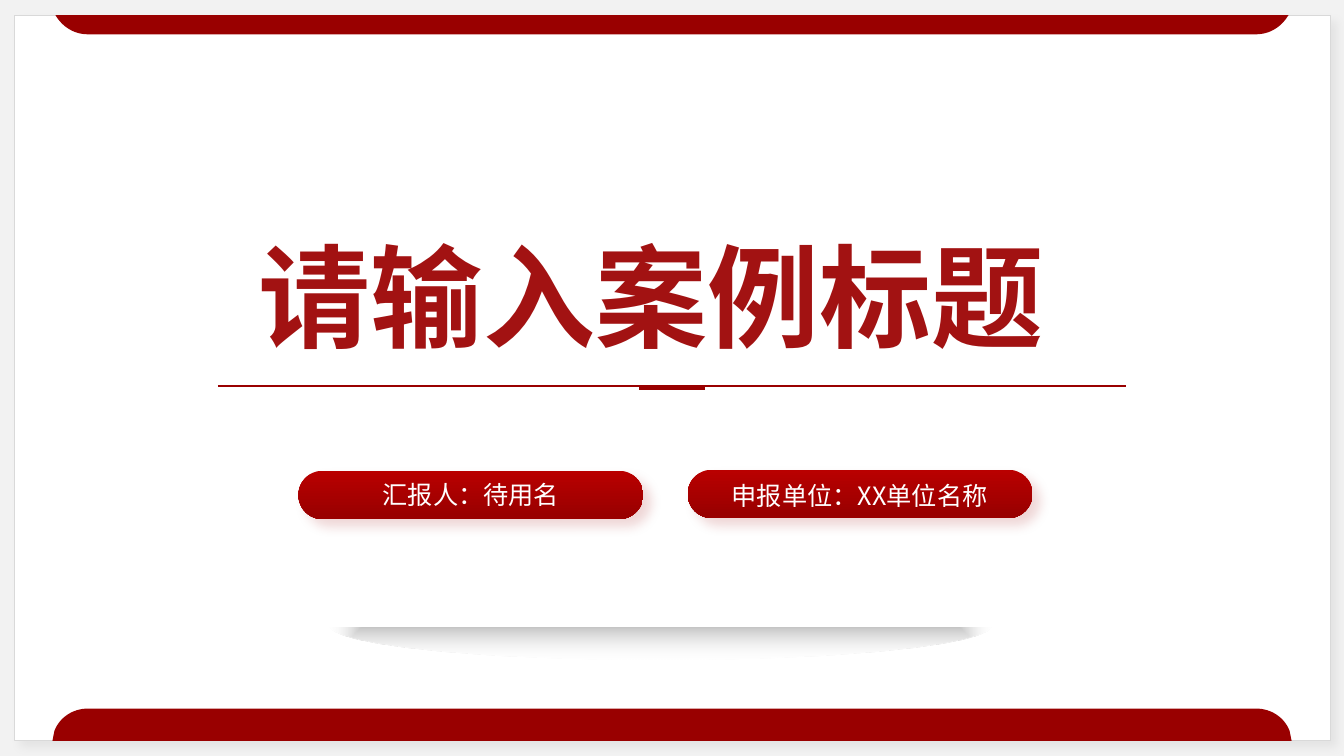
from lxml import etree
from pptx import Presentation
from pptx import util as u
from pptx.dml.color import RGBColor
from pptx.enum import shapes, text
from pptx.oxml import ns

FONT = "Noto Sans CJK SC"
BACKDROP = RGBColor(0xF2, 0xF2, 0xF2)
WHITE = RGBColor(0xFF, 0xFF, 0xFF)
BLACK = RGBColor(0, 0, 0)
BORDER = RGBColor(0xD9, 0xD9, 0xD9)
DARK_RED = RGBColor(0x99, 0, 0)
BRIGHT_RED = RGBColor(0xB9, 0, 0)
TITLE_RED = RGBColor(0xA2, 0x12, 0x12)
SHADE = RGBColor(0xBF, 0xBF, 0xBF)
PALE = RGBColor(0xF9, 0xF9, 0xF9)
SLIDE_WIDTH = 13.33


def add_element(parent, tag, **attributes):
    element = etree.SubElement(parent, ns.qn(tag))
    for name, value in attributes.items():
        element.set(name, str(value))
    return element


def add_shape(page, kind, left, top, width, height, fill=None):
    shape = page.shapes.add_shape(
        kind, u.Inches(left), u.Inches(top), u.Inches(width), u.Inches(height))
    shape.line.fill.background()
    shape.shadow.inherit = False
    if fill is not None:
        shape.fill.solid()
        shape.fill.fore_color.rgb = fill
    return shape


def add_shadow(shape, color, opacity, blur):
    effects = shape._element.spPr.find(ns.qn("a:effectLst"))
    shadow = add_element(effects, "a:outerShdw", blurRad=u.Pt(blur), dist=u.Pt(7),
                         dir=45 * 60000, algn="tl", rotWithShape=0)
    tint = add_element(shadow, "a:srgbClr", val=color)
    add_element(tint, "a:alpha", val=opacity * 1000)


def set_gradient(shape, first, last, end=1.0):
    shape.fill.gradient()
    shape.fill.gradient_angle = 270
    for stop, color, position in zip(shape.fill.gradient_stops, (first, last), (0, end)):
        stop.color.rgb = color
        stop.position = position


def add_text(page, words, left, top, width, height, size, color, centred=True):
    box = page.shapes.add_textbox(
        u.Inches(left), u.Inches(top), u.Inches(width), u.Inches(height))
    frame = box.text_frame
    frame.word_wrap = centred
    frame.auto_size = text.MSO_AUTO_SIZE.SHAPE_TO_FIT_TEXT
    frame.text = words
    para = frame.paragraphs[0]
    if centred:
        para.alignment = text.PP_ALIGN.CENTER
    span = para.runs[0]
    span.font.size = u.Pt(size)
    span.font.color.rgb = color
    span.font.name = FONT
    add_element(span.font._element, "a:ea", typeface=FONT)
    return span


def add_rule(page, left, right, y, weight):
    rule = page.shapes.add_connector(
        shapes.MSO_CONNECTOR.STRAIGHT,
        u.Inches(left), u.Inches(y), u.Inches(right), u.Inches(y))
    rule.line.color.rgb = DARK_RED
    rule.line.width = u.Pt(weight)
    add_element(rule._element.spPr, "a:effectLst")


def curve(points, steps=16):
    """Points along a cubic curve with four control points."""
    for step in range(steps + 1):
        t = step / steps
        weights = ((1 - t) ** 3, 3 * t * (1 - t) ** 2, 3 * t * t * (1 - t), t ** 3)
        yield tuple(sum(w * p[axis] for w, p in zip(weights, points)) for axis in (0, 1))


def add_edge_bar(page, corner, bend):
    """Bar with two mirrored rounded ends, given by its left end."""
    left_end = [corner, *curve(bend)]
    right_end = [(SLIDE_WIDTH - x, y) for x, y in reversed(left_end)]
    outline = [(u.Inches(x), u.Inches(y)) for x, y in left_end + right_end]
    builder = page.shapes.build_freeform(*outline[0])
    builder.add_line_segments(outline[1:], close=True)
    bar = builder.convert_to_shape()
    bar.fill.solid()
    bar.fill.fore_color.rgb = DARK_RED
    bar.line.fill.background()
    bar.shadow.inherit = False


def add_pill(page, left, top):
    pill = add_shape(page, shapes.MSO_SHAPE.ROUNDED_RECTANGLE, left, top, 3.42, 0.48)
    pill.adjustments[0] = 0.5
    set_gradient(pill, BRIGHT_RED, DARK_RED, 0.94)
    add_shadow(pill, TITLE_RED, 16, 8)


def add_floor_shadow(page):
    """Fading ellipse whose upper part is hidden by a white cover."""
    ellipse = add_shape(page, shapes.MSO_SHAPE.OVAL, 3.27, 5.86, 6.56, 0.68)
    set_gradient(ellipse, SHADE, PALE)
    gradient = ellipse._element.spPr.find(ns.qn("a:gradFill"))
    outer_color = gradient.findall(".//" + ns.qn("a:srgbClr"))[-1]
    add_element(outer_color, "a:alpha", val=0)
    gradient.remove(gradient.find(ns.qn("a:lin")))
    radial = add_element(gradient, "a:path", path="shape")
    add_element(radial, "a:fillToRect", l=50000, t=50000, r=50000, b=50000)
    add_shape(page, shapes.MSO_SHAPE.RECTANGLE, 2.78, 5.73, 7.52, 0.49, WHITE)


def main():
    deck = Presentation()
    deck.slide_width, deck.slide_height = u.Inches(SLIDE_WIDTH), u.Inches(7.5)
    page = deck.slides.add_slide(deck.slide_layouts[6])
    page.background.fill.solid()
    page.background.fill.fore_color.rgb = BACKDROP

    # White sheet with red bars at its top and bottom
    sheet = add_shape(page, shapes.MSO_SHAPE.RECTANGLE, 0.14, 0.15, 13.05, 7.2, WHITE)
    sheet.line.color.rgb = BORDER
    sheet.line.width = u.Pt(0.5)
    add_shadow(sheet, BLACK, 6, 7)
    add_edge_bar(page, (0.55, 0.15), [(0.57, 0.18), (0.64, 0.28), (0.75, 0.34), (0.87, 0.34)])
    add_edge_bar(page, (0.52, 7.35), [(0.54, 7.25), (0.59, 7.12), (0.72, 7.03), (0.87, 7.03)])

    # Title and its rule
    add_rule(page, 6.34, 6.99, 3.85, 2.75)
    add_rule(page, 2.16, 11.17, 3.83, 1.25)
    title = add_text(page, "请输入案例标题", 2.47, 2.21, 7.99, 1.45, 80, TITLE_RED, centred=False)
    title.font.bold = True

    # Presenter and organisation
    add_pill(page, 2.96, 4.67)
    add_text(page, "汇报人：待用名", 3.46, 4.71, 2.42, 0.4, 18, WHITE)
    add_pill(page, 6.82, 4.66)
    add_text(page, "申报单位：XX单位名称", 6.75, 4.72, 3.55, 0.4, 18, WHITE)

    add_floor_shadow(page)
    deck.save("out.pptx")


if __name__ == "__main__":
    main()
